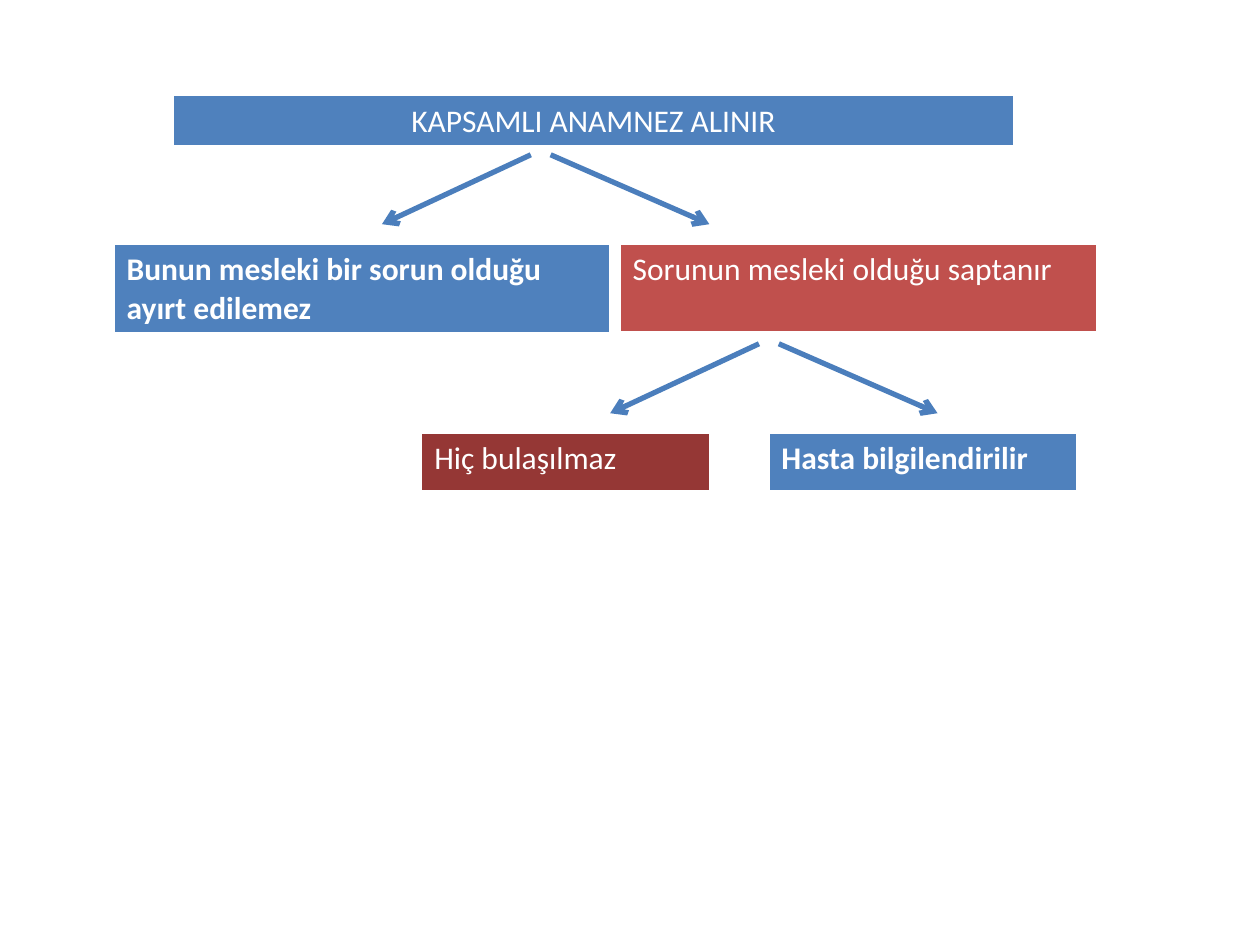
from lxml import etree
from pptx import Presentation
from pptx.dml.color import RGBColor
from pptx.enum.shapes import MSO_CONNECTOR
from pptx.enum.text import PP_ALIGN
from pptx.oxml.ns import qn
from pptx.util import Cm, Pt

STRAIGHT = MSO_CONNECTOR.STRAIGHT
LEFT, CENTER = PP_ALIGN.LEFT, PP_ALIGN.CENTER
COLORS = {
    "blue": "4F81BD",
    "red": "C0504D",
    "dark_red": "953735",
    "arrow": "4B7EBC",
    "white": "FFFFFF",
}
BORDER_WIDTHS = {"a:lnL": 1, "a:lnR": 1, "a:lnT": 1, "a:lnB": 3}


def rgb(name):
    return RGBColor.from_string(COLORS[name])


def write_text(frame, text, font="Calibri", size=18, color="white", bold=False, align=LEFT):
    para = frame.paragraphs[0]
    para.alignment = align
    span = para.add_run()
    span.text = text
    span.font.name = font
    span.font.size = Pt(size)
    span.font.bold = bold
    span.font.color.rgb = rgb(color)


class FlowPage:
    """Holds the slide and the look shared by its elements."""

    arrow_width = 3

    def __init__(self, deck):
        self.page = deck.slides.add_slide(deck.slide_layouts[6])

    def step(self, text, left, top, width, height, fill="blue", **text_format):
        """Add one flow step as a table with a single cell."""
        frame = self.page.shapes.add_table(1, 1, Cm(left), Cm(top), Cm(width), Cm(height))
        table = frame.table
        table.first_row = False
        table.horz_banding = False
        cell = table.cell(0, 0)
        self.add_borders(cell)
        cell.fill.solid()
        cell.fill.fore_color.rgb = rgb(fill)
        write_text(cell.text_frame, text, **text_format)

    def add_borders(self, cell):
        properties = cell._tc.get_or_add_tcPr()
        for side, width in BORDER_WIDTHS.items():
            border = etree.SubElement(properties, qn(side), w=str(Pt(width)))
            solid = etree.SubElement(border, qn("a:solidFill"))
            etree.SubElement(solid, qn("a:srgbClr"), val=COLORS["white"])

    def arrow(self, start_x, start_y, end_x, end_y):
        line = self.page.shapes.add_connector(
            STRAIGHT, Cm(start_x), Cm(start_y), Cm(end_x), Cm(end_y))
        line.line.color.rgb = rgb("arrow")
        line.line.width = Pt(self.arrow_width)
        etree.SubElement(line.line._get_or_add_ln(), qn("a:tailEnd"), type="arrow")
        etree.SubElement(line._element.spPr, qn("a:effectLst"))

    def fork(self, center, top):
        """Add two arrows that spread from a point to the row below."""
        for start, end in ((-0.2, -3.2), (0.2, 3.4)):
            self.arrow(center + start, top, center + end, top + 1.4)


def main():
    deck = Presentation()
    deck.slide_width, deck.slide_height = Cm(25.4), Cm(19.05)
    flow = FlowPage(deck)

    flow.step("KAPSAMLI ANAMNEZ ALINIR", 3.5, 1.93, 16.93, 1.03, align=CENTER)
    flow.fork(10.9, 3.12)
    flow.step("Bunun mesleki bir sorun olduğu ayırt edilemez",
              2.3, 4.93, 10, 1.78, bold=True)
    flow.step("Sorunun mesleki olduğu saptanır", 12.5, 4.93, 9.6, 1.78, fill="red")
    flow.fork(15.5, 6.93)
    flow.step("Hiç bulaşılmaz", 8.5, 8.73, 5.8, 1.2, fill="dark_red")
    flow.step("Hasta bilgilendirilir", 15.5, 8.73, 6.2, 1.2, bold=True)

    deck.save("out.pptx")


if __name__ == "__main__":
    main()
